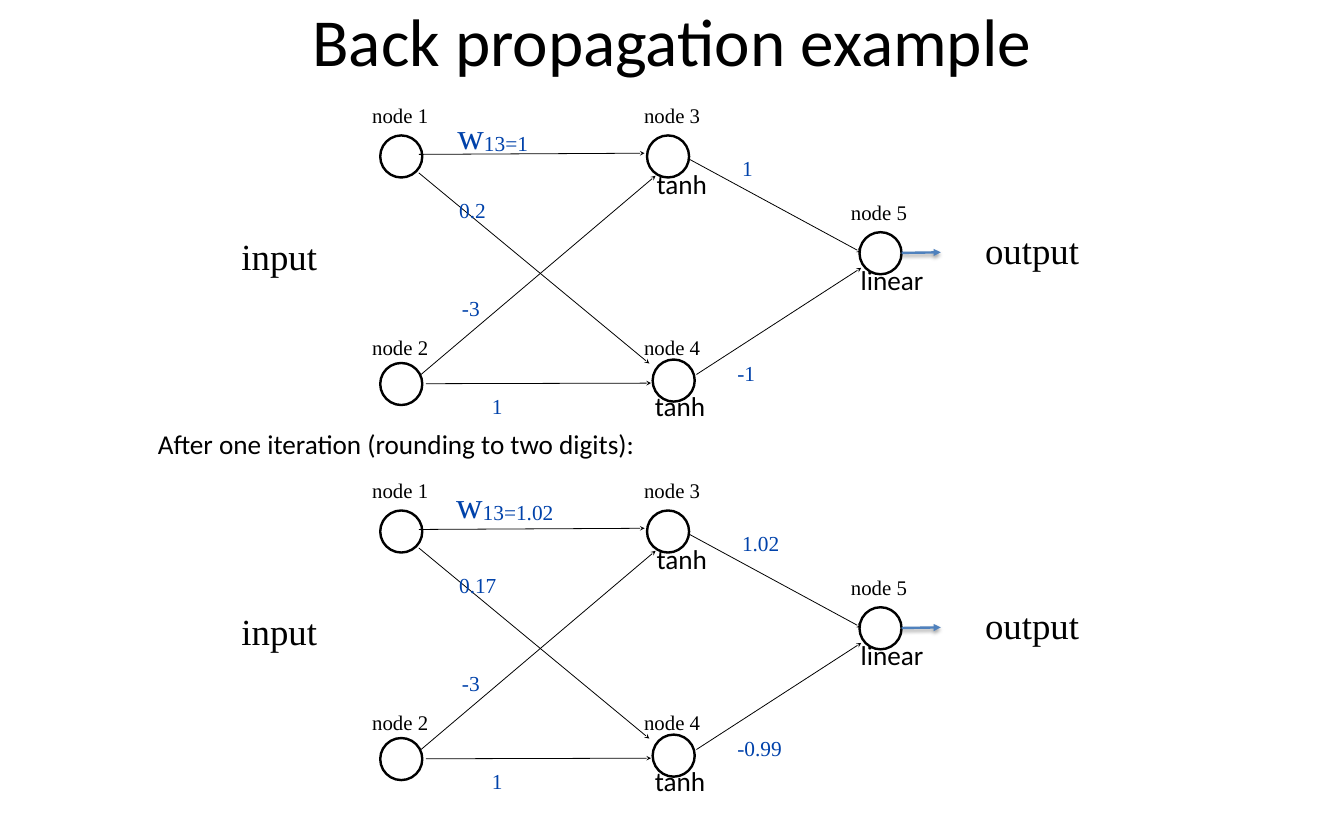
"""Build a slide showing a small neural network before and after one back propagation step."""
import dataclasses

import lxml.etree
import pptx
import pptx.dml.color
import pptx.enum.shapes
import pptx.enum.text
import pptx.oxml.ns
import pptx.util


@dataclasses.dataclass(frozen=True)
class Theme:
    sans: str = "Calibri"
    serif: str = "Times New Roman"
    ink: str = "000000"
    weight: str = "0042AA"
    accent: str = "4F81BD"
    title_size: int = 84
    large: int = 46
    medium: int = 34
    small: int = 26
    thin: int = 1
    thick: int = 3
    serif_inset: float = 0.11
    sans_inset: float = 0.1
    first_indent: float = 0.04


THEME = Theme()
WIDTH, HEIGHT = 23.33, 14.58
CELLS = 100
NODE_SIZE = (3.13, 5.01)
LABEL_SIZE = (5.36, 4.53)
LARGE_ROWS, MEDIUM_ROWS = 6.79, 5.14
NETWORK_STEP = 44.65

NODES = [(28.29, 16.12), (28.29, 43.21), (48.14, 16.12), (48.56, 42.8), (63.95, 27.64)]
LABELS = [(27.05, 11.52), (27.05, 39.09), (47.28, 11.52), (47.28, 39.09), (62.67, 22.98)]
EDGES = [
    ((31.16, 18.38), (47.96, 18.24)),
    ((31.68, 45.68), (48.44, 45.61)),
    ((51.26, 18.93), (64.08, 30.04)),
    ((51.82, 44.58), (64.08, 31.89)),
    ((31.16, 20.58), (48.31, 43.28)),
    ((31.33, 44.58), (48.78, 20.92)),
]
OUTPUT_ARROW = ((67.08, 30.11), (70, 30.04))
WEIGHT_SPOTS = [(33.52, 20.58), (33.73, 32.24), (35.96, 43.9), (54.57, 15.57), (54.22, 40.05)]
ACTIVATIONS = [
    ("tanh", 48.44, 19.2, 6.39),
    ("tanh", 48.31, 45.68, 6.39),
    ("linear", 63.61, 30.66, 7.72),
]
ENDS = [("input", 17.32, 27.09, 6.82), ("output", 72.65, 26.34, 8.19)]
NETWORKS = [
    (("13=1", 33.39, 12.62, 6.9),
     [("0.2", 3.47), ("-3", 2.7), ("1", 2.1), ("1", 2.1), ("-1", 2.7)]),
    (("13=1.02", 33.3, 11.93, 9.22),
     [("0.17", 4.37), ("-3", 2.7), ("1", 2.1), ("1.02", 4.37), ("-0.99", 4.97)]),
]


def rgb(color):
    return pptx.dml.color.RGBColor.from_string(color)


def sub(parent, tag, **attrs):
    return lxml.etree.SubElement(parent, pptx.oxml.ns.qn(tag), attrs)


def add_run(p, text, *, font, size, color=THEME.ink, baseline=0):
    r = p.add_run()
    r.text = text
    r.font.name = font
    r.font.size = pptx.util.Pt(size)
    r.font.color.rgb = rgb(color)
    if baseline:
        r._r.get_or_add_rPr().set("baseline", str(baseline * 1000))


class Diagram:
    def __init__(self, slide, theme):
        self.slide, self.theme = slide, theme
        self.top = 0

    def x(self, cols):
        return pptx.util.Inches(WIDTH * cols / CELLS)

    def y(self, rows):
        return pptx.util.Inches(HEIGHT * rows / CELLS)

    def box(self, x, y, w, h):
        return self.x(x), self.y(y + self.top), self.x(w), self.y(h)

    def inset(self, tf, inches):
        for side in ("left", "right", "top", "bottom"):
            setattr(tf, f"margin_{side}", pptx.util.Inches(inches))

    def title(self, text, x, y, w, h):
        sp = self.slide.shapes.title
        sp.left, sp.top, sp.width, sp.height = self.box(x, y, w, h)
        tf = sp.text_frame
        self.inset(tf, self.theme.sans_inset)
        tf.vertical_anchor = pptx.enum.text.MSO_ANCHOR.MIDDLE
        p = tf.paragraphs[0]
        p.alignment = pptx.enum.text.PP_ALIGN.CENTER
        add_run(p, text, font=self.theme.sans, size=self.theme.title_size)

    def text(self, runs, x, y, w, h, *, serif=True, wrap=False, **style):
        theme = self.theme
        tf = self.slide.shapes.add_textbox(*self.box(x, y, w, h)).text_frame
        self.inset(tf, theme.serif_inset if serif else theme.sans_inset)
        tf.word_wrap = wrap
        tf.auto_size = pptx.enum.text.MSO_AUTO_SIZE.SHAPE_TO_FIT_TEXT
        p = tf.paragraphs[0]
        if serif:
            p._p.get_or_add_pPr().set("indent", str(pptx.util.Inches(theme.first_indent)))
        for text, baseline in runs:
            add_run(p, text, font=theme.serif if serif else theme.sans,
                    baseline=baseline, **style)

    def node(self, x, y):
        oval = pptx.enum.shapes.MSO_SHAPE.OVAL
        sp = self.slide.shapes.add_shape(oval, *self.box(x, y, *NODE_SIZE))
        sp.shadow.inherit = False
        sp.fill.background()
        sp.line.color.rgb = rgb(self.theme.ink)
        sp.line.width = pptx.util.Pt(self.theme.thick)

    def arrow(self, start, end, *, color, width, head, shadow=False):
        (x1, y1), (x2, y2) = start, end
        sp = self.slide.shapes.add_connector(
            pptx.enum.shapes.MSO_CONNECTOR.STRAIGHT,
            self.x(x1), self.y(y1 + self.top), self.x(x2), self.y(y2 + self.top))
        sp.line.color.rgb = rgb(color)
        sp.line.width = pptx.util.Pt(width)
        sub(sp.line._get_or_add_ln(), "a:tailEnd", type=head)
        effects = sub(sp._element.spPr, "a:effectLst")
        if shadow:
            cast = sub(effects, "a:outerShdw", blurRad=str(pptx.util.Pt(5)),
                       dist=str(pptx.util.Pt(3)), dir="5400000", rotWithShape="0")
            sub(sub(cast, "a:srgbClr", val=self.theme.ink), "a:alpha", val="38000")

    def network(self, top, first_weight, weights):
        theme, self.top = self.theme, top
        blue = {"size": theme.large, "color": theme.weight}
        for number, (node, label) in enumerate(zip(NODES, LABELS), 1):
            self.node(*node)
            self.text([(f"node {number}", 0)], *label, *LABEL_SIZE, size=theme.small)
        for start, end in EDGES:
            self.arrow(start, end, color=theme.ink, width=theme.thin, head="stealth")
        value, *spot = first_weight
        self.text([("w", 0), (value, -6)], *spot, LARGE_ROWS, **blue)
        for (value, cols), spot in zip(weights, WEIGHT_SPOTS):
            self.text([(value, -6)], *spot, cols, LARGE_ROWS, **blue)
        for name, *spot in ENDS:
            self.text([(name, 0)], *spot, LARGE_ROWS, size=theme.large)
        self.arrow(*OUTPUT_ARROW, color=theme.accent, width=theme.thick,
                   head="triangle", shadow=True)
        for name, *spot in ACTIVATIONS:
            self.text([(name, 0)], *spot, MEDIUM_ROWS, serif=False, wrap=True,
                      size=theme.medium)
        self.top = 0


def main():
    prs = pptx.Presentation()
    prs.slide_width = pptx.util.Inches(WIDTH)
    prs.slide_height = pptx.util.Inches(HEIGHT)
    diagram = Diagram(prs.slides.add_slide(prs.slide_layouts[5]), THEME)
    diagram.title("Back propagation example", 12.5, -6.24, 75, 22.02)
    for index, (first_weight, weights) in enumerate(NETWORKS):
        diagram.network(index * NETWORK_STEP, first_weight, weights)
    diagram.text([("After one iteration (rounding to two digits):", 0)],
                 11.32, 50.21, 40.72, MEDIUM_ROWS, serif=False, size=THEME.medium)
    prs.save("out.pptx")


if __name__ == "__main__":
    main()
